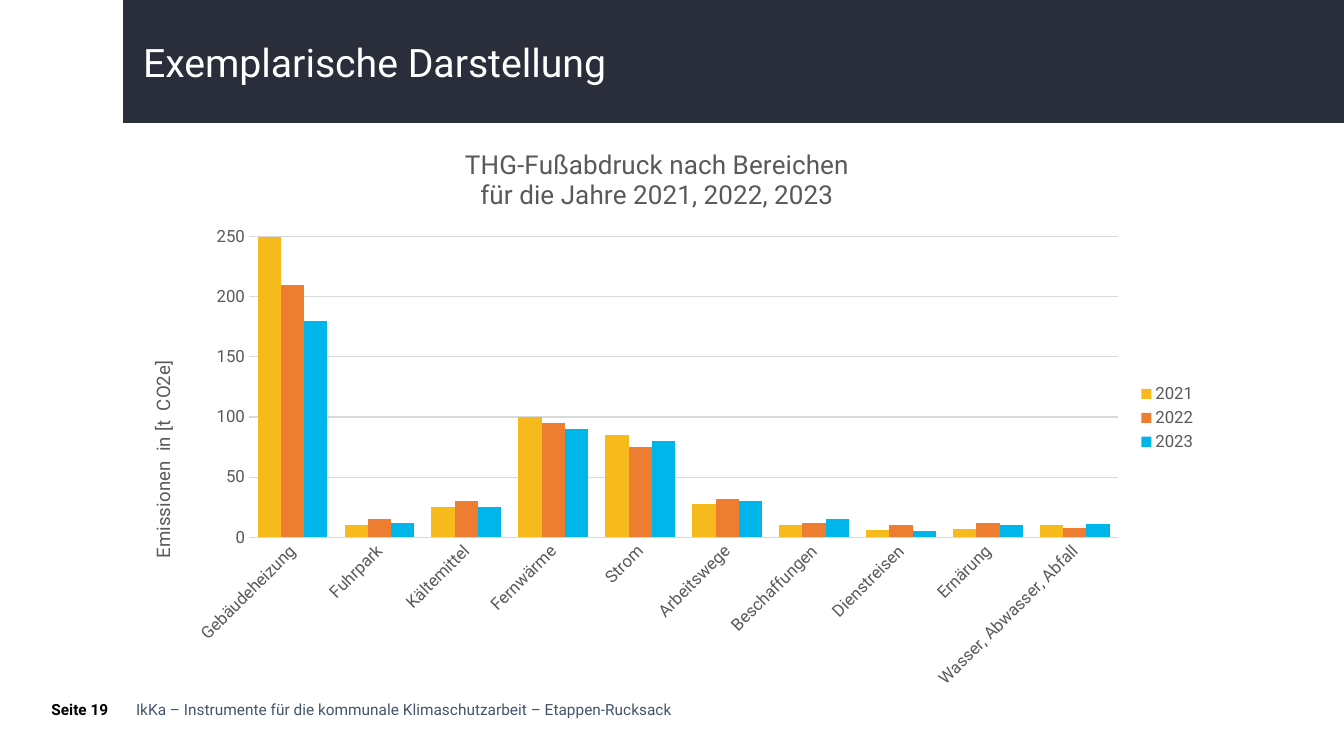
from lxml import etree
from pptx import Presentation
from pptx.chart.data import CategoryChartData
from pptx.dml.color import RGBColor
from pptx.enum.chart import XL_CHART_TYPE, XL_LEGEND_POSITION, XL_TICK_MARK
from pptx.enum.shapes import MSO_SHAPE
from pptx.enum.text import MSO_ANCHOR
from pptx.oxml.ns import qn
from pptx.util import Inches, Pt

COLUMN = XL_CHART_TYPE.COLUMN_CLUSTERED
RIGHT = XL_LEGEND_POSITION.RIGHT
NONE = XL_TICK_MARK.NONE
RECT = MSO_SHAPE.RECTANGLE
TOP, MIDDLE = MSO_ANCHOR.TOP, MSO_ANCHOR.MIDDLE
WIDE, HIGH = 13.33, 7.5


class Theme:
    """Colours, font and type sizes of the slide."""
    face = "Roboto"
    band, white, black = "2A2E3B", "FFFFFF", "000000"
    foot, label, grid = "44546A", "595959", "D9D9D9"
    bars = ("F7BA1C", "ED7D31", "00B5E9")
    head, title, axis, tick, small = 28, 18.6, 13.3, 12, 11


AREAS = ["Gebäudeheizung", "Fuhrpark", "Kältemittel", "Fernwärme", "Strom",
         "Arbeitswege", "Beschaffungen", "Dienstreisen", "Ernärung",
         "Wasser, Abwasser, Abfall"]
YEARS = {
    "2021": (250, 10, 25, 100, 85, 28, 10, 6, 7, 10),
    "2022": (210, 15, 30, 95, 75, 32, 12, 10, 12, 8),
    "2023": (180, 12, 25, 90, 80, 30, 15, 5, 10, 11),
}


def tint(color):
    """Turn a hex string into a colour."""
    return RGBColor.from_string(color)


def style(font, size, color, bold=False):
    """Set the look of a font."""
    font.name, font.size, font.bold = Theme.face, Pt(size), bold
    font.color.rgb = tint(color)


def write(frame, text, size=Theme.tick, color=Theme.label, bold=False, lead=None):
    """Write text into a frame, one paragraph per line."""
    for num, line in enumerate(text.split("\n")):
        para = frame.add_paragraph() if num else frame.paragraphs[0]
        if lead:
            para.line_spacing = lead
        run = para.add_run()
        run.text = line
        style(run.font, size, color, bold)


def label(slide, box, text, pad=0, anchor=TOP, **look):
    """Place a text box with even padding."""
    frame = slide.shapes.add_textbox(*map(Inches, box)).text_frame
    frame.word_wrap = True
    frame.vertical_anchor = anchor
    frame.margin_left = frame.margin_right = Inches(pad)
    frame.margin_top = frame.margin_bottom = Inches(pad / 2)
    write(frame, text, **look)


def header(slide, box):
    """Draw the title band and its heading."""
    left, top, width, height = box
    band = slide.shapes.add_shape(RECT, *map(Inches, box))
    band.shadow.inherit = False
    band.fill.solid()
    band.fill.fore_color.rgb = tint(Theme.band)
    band.line.fill.background()
    label(slide, (left + 0.1, top + height * 0.28, width * 0.95, height / 2),
          "Exemplarische Darstellung", pad=0.1, anchor=MIDDLE,
          size=Theme.head, color=Theme.white, lead=0.9)


def footer(slide, box):
    """Place the page number and the name of the series."""
    left, top, width, height = box
    label(slide, (left, top, 0.73, height), "Seite 19",
          size=Theme.small, color=Theme.black, bold=True)
    label(slide, (left + 0.84, top, width - 0.84, height),
          "IkKa – Instrumente für die kommunale Klimaschutzarbeit – Etappen-Rucksack",
          size=Theme.small, color=Theme.foot)


def place(part, index, inner=False, **share):
    """Fix a chart part at shares of the chart's size."""
    for old in part.findall(qn("c:layout")):
        part.remove(old)
    layout = etree.Element(qn("c:layout"))
    manual = etree.SubElement(layout, qn("c:manualLayout"))
    marks = {"layoutTarget": "inner"} if inner else {}
    marks |= {"xMode": "edge", "yMode": "edge"} | share
    for name, value in marks.items():
        etree.SubElement(manual, qn("c:" + name)).set("val", str(value))
    part.insert(index, layout)


def axes(chart):
    """Format both axes and the grid."""
    areas, tons = chart.category_axis, chart.value_axis
    for axis in (areas, tons):
        axis.major_tick_mark = axis.minor_tick_mark = NONE
        style(axis.tick_labels.font, Theme.tick, Theme.label)
    tons.minimum_scale, tons.maximum_scale, tons.major_unit = 0, 250, 50
    tons.format.line.fill.background()
    for line in (areas.format.line, tons.major_gridlines.format.line):
        line.color.rgb, line.width = tint(Theme.grid), Pt(0.75)
    areas._element.txPr.find(qn("a:bodyPr")).set("rot", "-2700000")
    write(tons.axis_title.text_frame, "Emissionen  in [t  CO2e]", size=Theme.axis)
    turn = tons.axis_title.text_frame._txBody.find(qn("a:bodyPr"))
    turn.set("rot", "-5400000")
    turn.set("vert", "horz")
    place(tons.axis_title._element, 1, x=0.02, y=0.4)


def graph(slide, box):
    """Draw the emissions by area and year."""
    data = CategoryChartData()
    data.categories = AREAS
    for year, vals in YEARS.items():
        data.add_series(year, vals)
    chart = slide.shapes.add_chart(COLUMN, *map(Inches, box), data).chart
    style(chart.font, 10, Theme.black)
    plot = chart.plots[0]
    plot.gap_width, plot.overlap, plot.vary_by_categories = 75, 0, False
    for bars, color in zip(plot.series, Theme.bars):
        bars.format.fill.solid()
        bars.format.fill.fore_color.rgb = tint(color)
    axes(chart)
    chart.has_title = True
    write(chart.chart_title.text_frame,
          "THG-Fußabdruck nach Bereichen\nfür die Jahre 2021, 2022, 2023",
          size=Theme.title)
    place(chart.chart_title._element, 1, x=0.31, y=0.03)
    chart.has_legend = True
    chart.legend.position = RIGHT
    chart.legend.include_in_layout = False
    style(chart.legend.font, Theme.tick, Theme.label)
    place(chart.legend._element, 1, x=0.93, y=0.44)
    place(plot._element.getparent(), 0, inner=True, x=0.114, y=0.19, w=0.8, h=0.525)


def main():
    """Build the slide and save it."""
    deck = Presentation()
    deck.slide_width, deck.slide_height = Inches(WIDE), Inches(HIGH)
    slide = deck.slides.add_slide(deck.slide_layouts[6])
    header(slide, (1.22, 0, WIDE - 1.22, 1.22))
    graph(slide, (1.24, 1.27, 10.78, 5.68))
    footer(slide, (0.51, 6.95, 6.41, 0.24))
    deck.save("out.pptx")


if __name__ == "__main__":
    main()
